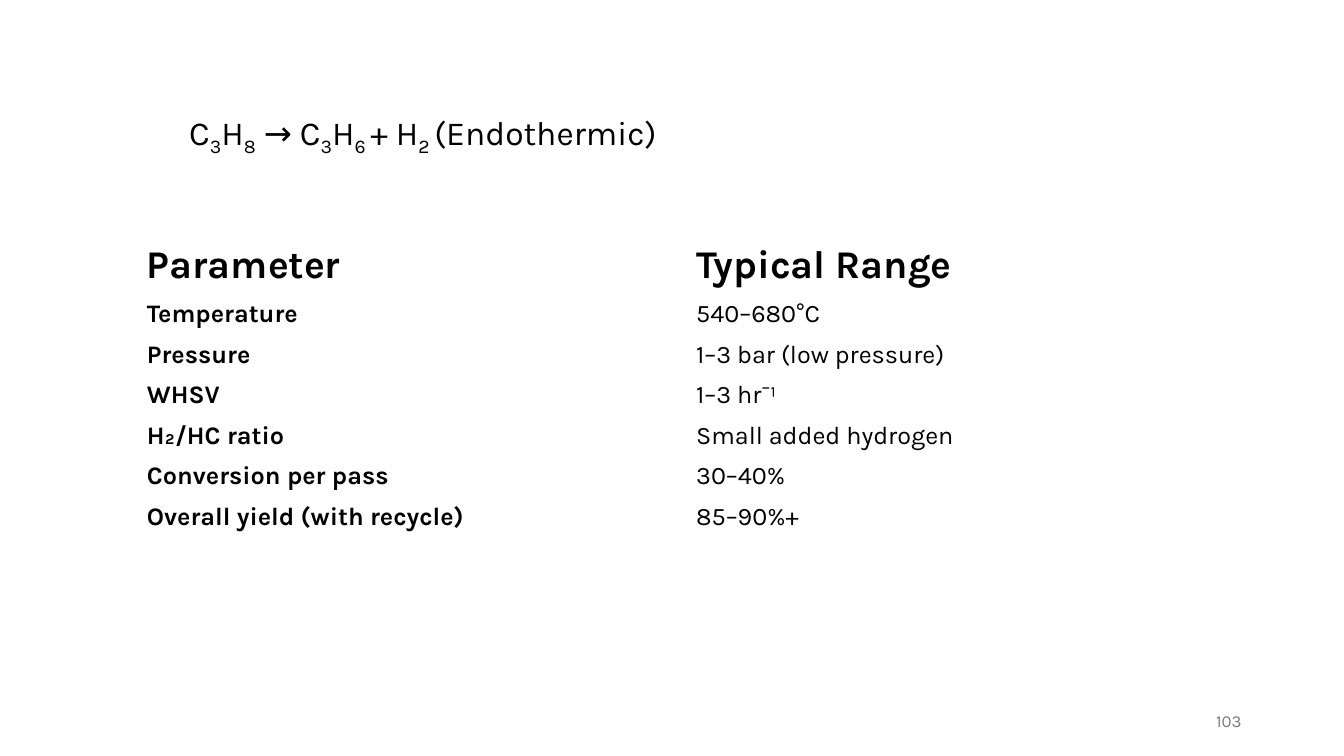
from pptx import Presentation
from pptx.dml.color import RGBColor
from pptx.enum.text import MSO_ANCHOR as Anchor, MSO_AUTO_SIZE as AutoSize, PP_ALIGN as Align
from pptx.util import Cm, Pt

FORMULA = [("C", "3"), ("H", "8"), (" → C", "3"), ("H", "6 "), ("+ H", "2 "), ("(Endothermic)", "")]
CONDITIONS = [
    ("Parameter", "Typical Range"),
    ("Temperature", "540–680°C"),
    ("Pressure", "1–3 bar (low pressure)"),
    ("WHSV", "1–3 hr⁻¹"),
    ("H₂/HC ratio", "Small added hydrogen"),
    ("Conversion per pass", "30–40%"),
    ("Overall yield (with recycle)", "85–90%+"),
]


def color(code):
    return RGBColor.from_string(code)


class SlideWriter:
    font_name = "Karla"
    ink = "000000"
    grey = "797979"

    def __init__(self, page):
        self.page = page

    def style(self, span, size, code=None, bold=False):
        span.font.name = self.font_name
        span.font.size = Pt(size)
        span.font.bold = bold
        span.font.color.rgb = color(code or self.ink)

    def text_box(self, left, top, width, height):
        box = self.page.shapes.add_textbox(Cm(left), Cm(top), Cm(width), Cm(height))
        box.text_frame.word_wrap = True
        return box.text_frame

    def formula(self, parts, left, top, width, height):
        """Write pairs of normal text and the subscript that follows it."""
        frame = self.text_box(left, top, width, height)
        frame.auto_size = AutoSize.SHAPE_TO_FIT_TEXT
        para = frame.paragraphs[0]
        for normal, subscript in parts:
            for text, baseline in ((normal, "0"), (subscript, "-25000")):
                if text:
                    span = para.add_run()
                    span.text = text
                    self.style(span, 24)
                    span._r.get_or_add_rPr().set("baseline", baseline)

    def page_number(self, number, left, top, width, height):
        frame = self.text_box(left, top, width, height)
        frame.vertical_anchor = Anchor.MIDDLE
        frame.text = number
        para = frame.paragraphs[0]
        para.alignment = Align.RIGHT
        self.style(para.runs[0], 12, self.grey)

    def table(self, rows, left, top, widths, header_height, row_height):
        height = header_height + row_height * (len(rows) - 1)
        table = self.page.shapes.add_table(
            len(rows), len(widths), Cm(left), Cm(top), Cm(sum(widths)), Cm(height)).table
        table.first_row = table.horz_banding = False
        for column, width in zip(table.columns, widths):
            column.width = Cm(width)
        for i, texts in enumerate(rows):
            header = i == 0
            table.rows[i].height = Cm(header_height if header else row_height)
            for j, text in enumerate(texts):
                cell = table.cell(i, j)
                cell.fill.background()
                cell.vertical_anchor = Anchor.MIDDLE
                cell.text_frame.text = text
                self.style(cell.text_frame.paragraphs[0].runs[0],
                           28 if header else 18, bold=header or j == 0)


def main():
    deck = Presentation()
    deck.slide_width, deck.slide_height = Cm(33.87), Cm(19.05)
    writer = SlideWriter(deck.slides.add_slide(deck.slide_layouts[6]))
    writer.page_number("103", 23.92, 17.66, 7.62, 1.01)
    writer.formula(FORMULA, 4.52, 2.69, 16.92, 1.28)
    writer.table(CONDITIONS, 3.45, 5.97, (13.84, 14.6), 1.43, 1.02)
    deck.save("out.pptx")


if __name__ == "__main__":
    main()
